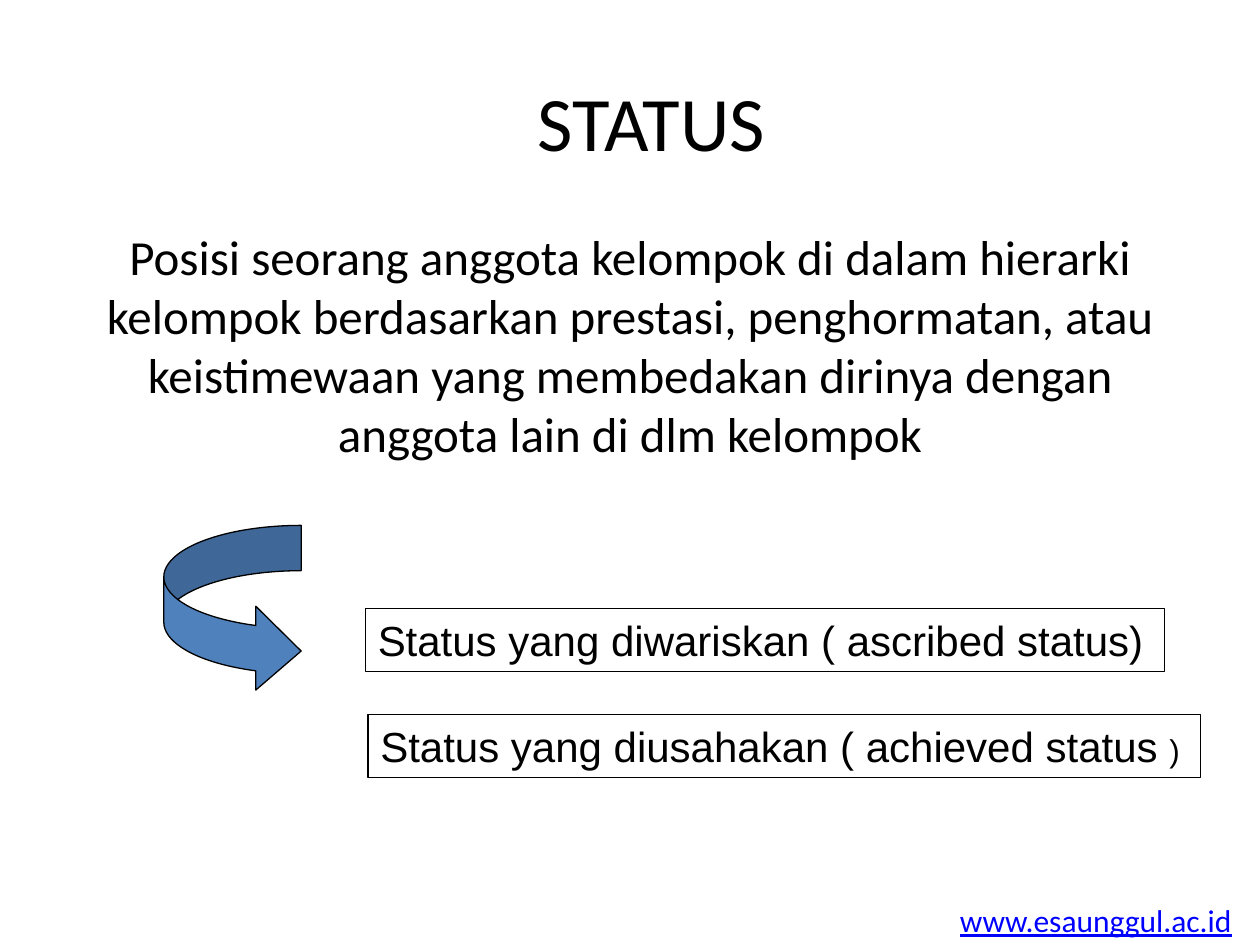
from dataclasses import dataclass

import pptx
import pptx.dml.color
import pptx.enum.shapes
import pptx.enum.text
import pptx.util

PX = 9144  # EMU per px, 100 px to the inch
SHAPE = pptx.enum.shapes.MSO_SHAPE
ALIGN = pptx.enum.text.PP_ALIGN
ANCHOR = pptx.enum.text.MSO_ANCHOR


@dataclass(frozen=True)
class Theme:
    ink: str = "000000"
    blue: str = "4F81BD"
    link: str = "0000FF"
    head: str = "Calibri"
    label: str = "Arial"
    title: int = 44
    body: int = 28
    item: int = 24
    small: int = 18
    line: float = 0.75


@dataclass(frozen=True)
class Box:
    left: int
    top: int
    width: int
    height: int

    def emu(self) -> list[int]:
        return [n * PX for n in (self.left, self.top, self.width, self.height)]


@dataclass(frozen=True)
class Run:
    text: str
    size: int
    face: str
    color: str
    under: bool = False


@dataclass(frozen=True)
class Item:
    box: Box
    runs: list[Run]


THEME = Theme()


def rgb(code: str) -> pptx.dml.color.RGBColor:
    return pptx.dml.color.RGBColor.from_string(code)


def write(frame, runs: list[Run], align=ALIGN.LEFT, wrap: bool = True,
          anchor=ANCHOR.TOP) -> None:
    frame.word_wrap = wrap
    frame.vertical_anchor = anchor
    para = frame.paragraphs[0]
    para.alignment = align
    for run in runs:
        part = para.add_run()
        part.text = run.text
        part.font.size = pptx.util.Pt(run.size)
        part.font.name = run.face
        part.font.color.rgb = rgb(run.color)
        if run.under:
            part.font.underline = True


def add_title(slide, box: Box, run: Run) -> None:
    title = slide.shapes.title
    title.left, title.top, title.width, title.height = box.emu()
    write(title.text_frame, [run], ALIGN.CENTER, anchor=ANCHOR.MIDDLE)


def add_text(slide, box: Box, run: Run, align=ALIGN.LEFT, wrap: bool = True) -> None:
    text = slide.shapes.add_textbox(*box.emu())
    write(text.text_frame, [run], align, wrap)


def add_form(slide, kind, box: Box, fill: str = ""):
    form = slide.shapes.add_shape(kind, *box.emu())
    form.shadow.inherit = False
    if fill:
        form.fill.solid()
        form.fill.fore_color.rgb = rgb(fill)
    else:
        form.fill.background()
    form.line.color.rgb = rgb(THEME.ink)
    form.line.width = pptx.util.Pt(THEME.line)
    return form


def add_item(slide, item: Item) -> None:
    form = add_form(slide, SHAPE.RECTANGLE, item.box)
    write(form.text_frame, item.runs, wrap=False)


def label(text: str, size: int = THEME.item) -> Run:
    return Run(text, size, THEME.label, THEME.ink)


ITEMS = [
    Item(Box(290, 483, 634, 50), [label("Status yang diwariskan ( ascribed status)")]),
    Item(Box(292, 567, 661, 50), [label("Status yang diusahakan ( achieved status "),
                                  label(")", THEME.small)]),
]
BODY = ("Posisi seorang anggota kelompok di dalam hierarki kelompok berdasarkan "
        "prestasi, penghormatan, atau keistimewaan yang membedakan dirinya dengan "
        "anggota lain di dlm kelompok")


def main() -> None:
    deck = pptx.Presentation()
    deck.slide_width, deck.slide_height = 1000 * PX, 750 * PX
    slide = deck.slides.add_slide(deck.slide_layouts.get_by_name("Title Only"))

    # Web address in the corner
    add_text(slide, Box(752, 710, 238, 40),
             Run("www.esaunggul.ac.id", THEME.small, THEME.head, THEME.link, True),
             wrap=False)

    # Title and definition
    add_title(slide, Box(67, 33, 900, 125),
              Run("STATUS", THEME.title, THEME.head, THEME.ink))
    add_text(slide, Box(50, 175, 900, 275),
             Run(BODY, THEME.body, THEME.head, THEME.ink), ALIGN.CENTER)

    # Arrow to the two kinds of status
    arrow = add_form(slide, SHAPE.CURVED_RIGHT_ARROW, Box(130, 417, 109, 133), THEME.blue)
    for i, value in enumerate((0.33, 0.66, 0.33)):
        arrow.adjustments[i] = value
    for item in ITEMS:
        add_item(slide, item)

    deck.save("out.pptx")


if __name__ == "__main__":
    main()
